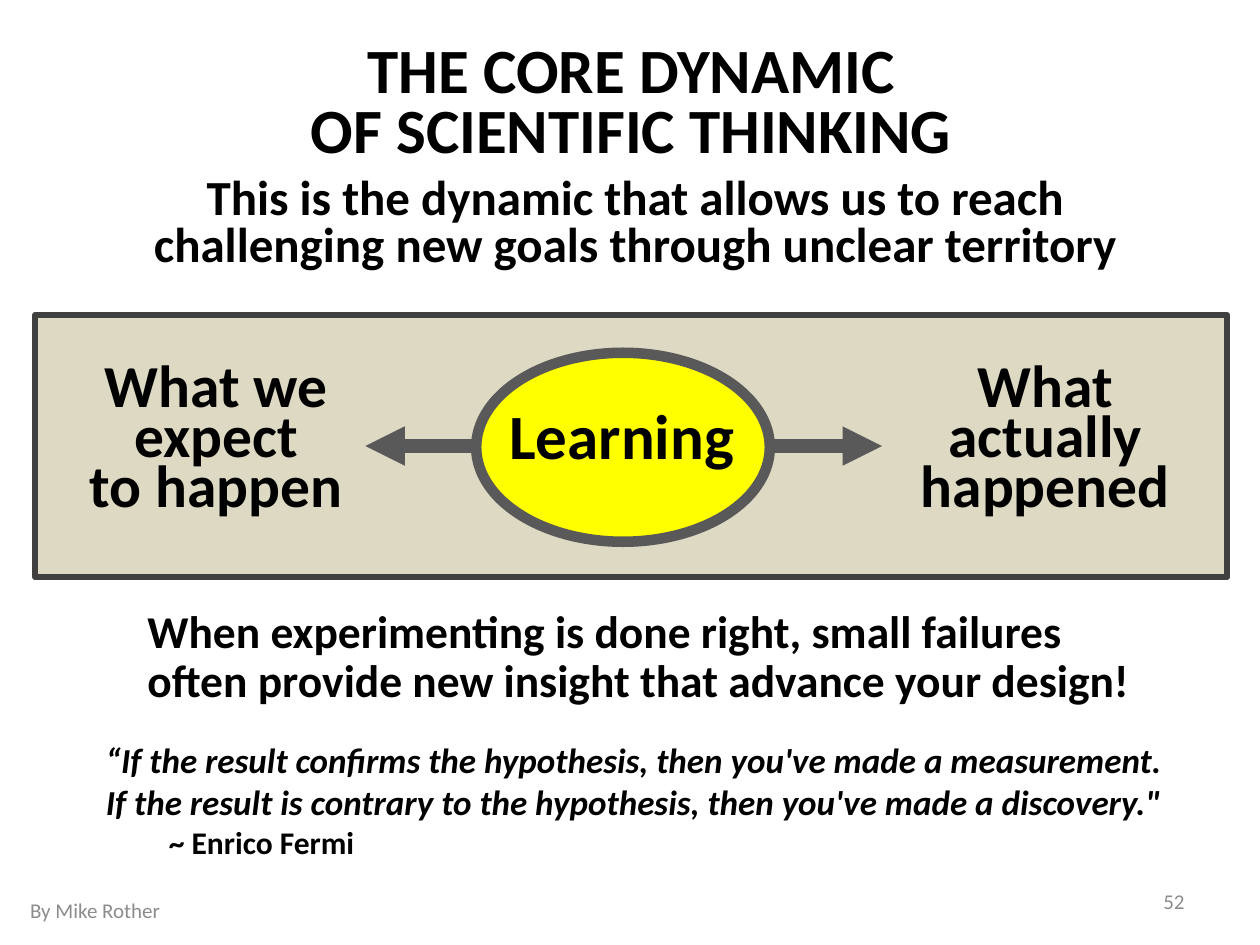
from lxml.etree import SubElement
from pptx import Presentation
from pptx.dml.color import RGBColor
from pptx.enum.shapes import MSO_CONNECTOR, MSO_SHAPE
from pptx.enum.text import MSO_ANCHOR as ANCHOR, MSO_AUTO_SIZE as AUTO, PP_ALIGN as ALIGN
from pptx.oxml.ns import qn
from pptx.util import Inches, Pt

BLACK, GREY, FOOTER_GREY = "000000", "595959", "8C8C8C"


def color(hex_text):
    return RGBColor.from_string(hex_text)


def write(box, lines, size, align=ALIGN.LEFT, spacing=1.0, bold=True,
          ink=BLACK, anchor=ANCHOR.TOP, inset=0.1):
    frame = box.text_frame
    frame.word_wrap = True
    frame.auto_size = AUTO.NONE
    frame.vertical_anchor = anchor
    frame.margin_left = frame.margin_right = Inches(inset)
    frame.margin_top = frame.margin_bottom = Inches(inset / 2)
    frame.text = "\n".join(lines)
    for line in frame.paragraphs:
        line.alignment = align
        line.line_spacing = spacing
        line.space_before = Pt(0)
        line.font.name = "Calibri"
        line.font.size = Pt(size)
        line.font.bold = bold
        line.font.color.rgb = color(ink)
    return frame.paragraphs


prs = Presentation()
prs.slide_width, prs.slide_height = Inches(10), Inches(7.5)
slide = prs.slides.add_slide(prs.slide_layouts[5])
shapes = slide.shapes

# Title and lead sentence
title = shapes.title
title.left, title.top = Inches(0.28), Inches(0.31)
title.width, title.height = Inches(9.46), Inches(1.08)
write(title, ["THE CORE DYNAMIC", "OF SCIENTIFIC THINKING"], 36, ALIGN.CENTER, 0.8, inset=0.09)

lead = shapes.add_textbox(Inches(0.75), Inches(1.36), Inches(8.58), Inches(0.87))
write(lead, ["This is the dynamic that allows us to reach challenging new goals "
             "through unclear territory"], 28, ALIGN.CENTER, 0.8)

# Panel, with expectation on the left and outcome on the right
panel = shapes.add_shape(MSO_SHAPE.RECTANGLE, Inches(0.28), Inches(2.5), Inches(9.46), Inches(2.08))

for left, lines in [(0.09, ["What we", "expect", "to happen"]),
                    (6.67, ["What", "actually", "happened"])]:
    side = shapes.add_textbox(Inches(left), Inches(2.87), Inches(3.25), Inches(1.33))
    write(side, lines, 34, ALIGN.CENTER, 0.7)

# Double-headed arrow behind the learning oval
gap_arrow = shapes.add_connector(MSO_CONNECTOR.STRAIGHT, Inches(2.9), Inches(3.54),
                                 Inches(7), Inches(3.54))
gap_arrow.line.color.rgb = color(GREY)
gap_arrow.line.width = Pt(7.5)
arrow_line = gap_arrow.line._get_or_add_ln()
for end in ("a:headEnd", "a:tailEnd"):
    SubElement(arrow_line, qn(end), type="triangle")
SubElement(gap_arrow._element.spPr, qn("a:effectLst"))

oval = shapes.add_shape(MSO_SHAPE.OVAL, Inches(3.78), Inches(2.8), Inches(2.33), Inches(1.5))
for shape, fill, edge, weight in [(panel, "DDD9C3", "404040", 3.5), (oval, "FFFF00", GREY, 6)]:
    shape.shadow.inherit = False
    shape.fill.solid()
    shape.fill.fore_color.rgb = color(fill)
    shape.line.color.rgb = color(edge)
    shape.line.width = Pt(weight)

learning = shapes.add_textbox(Inches(3.31), Inches(3.26), Inches(3.25), Inches(0.56))
write(learning, ["Learning"], 36, ALIGN.CENTER, 0.7)

# Conclusion
conclusion = shapes.add_textbox(Inches(1.08), Inches(4.79), Inches(8.17), Inches(0.89))
write(conclusion, ["When experimenting is done right, small failures often provide new "
                   "insight that advance your design!"], 26, spacing=0.9, inset=0.09)

# Quotation with its indented author
quotation = shapes.add_textbox(Inches(0.75), Inches(5.82), Inches(8.75), Inches(1.07))
quote, author = write(quotation, [
    "“If the result confirms the hypothesis, then you've made a measurement. "
    "If the result is contrary to the hypothesis, then you've made a discovery.\"",
    "~ Enrico Fermi"], 20, inset=0.09)
quote.font.italic = True
author.font.size = Pt(18)
author._p.get_or_add_pPr().set("marL", str(Inches(0.5)))

# Footer
for left, top, width, text, align in [(0.14, 7.02, 3.17, "By Mike Rother", ALIGN.LEFT),
                                      (7.17, 6.95, 2.33, "52", ALIGN.RIGHT)]:
    footer = shapes.add_textbox(Inches(left), Inches(top), Inches(width), Inches(0.4))
    write(footer, [text], 12, align, bold=False, ink=FOOTER_GREY, anchor=ANCHOR.MIDDLE)

prs.save("out.pptx")
